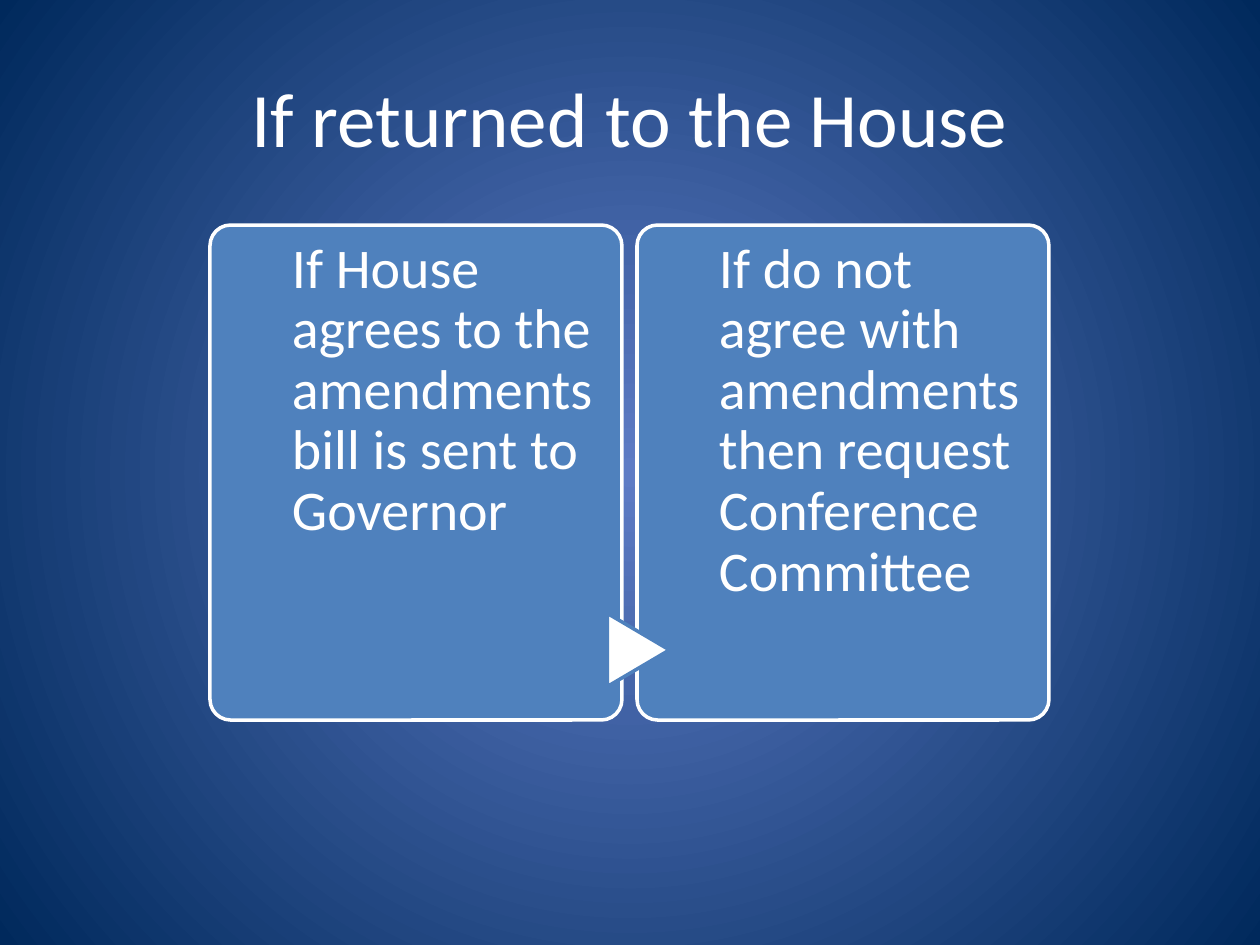
from lxml.etree import SubElement
from pptx import Presentation
from pptx.dml.color import RGBColor
from pptx.enum.shapes import MSO_SHAPE as Shape
from pptx.enum.text import MSO_ANCHOR as Anchor, PP_ALIGN as Align
from pptx.oxml.ns import qn
from pptx.util import Emu, Pt

EMU_PER_PX = 914400 / 126
FONT = "Calibri"
WHITE = RGBColor(0xFF, 0xFF, 0xFF)
CARD_BLUE = RGBColor(0x4F, 0x81, 0xBD)
GLOW_BLUE = RGBColor(0x5E, 0x7C, 0xC5)
NIGHT_BLUE = RGBColor(0x00, 0x29, 0x5C)

OUTCOMES = [
    "If House agrees to the amendments bill is sent to Governor",
    "If do not agree with amendments then request Conference Committee",
]


def px(*lengths):
    """Turn pixel lengths into a list of EMU."""
    return [Emu(round(length * EMU_PER_PX)) for length in lengths]


def paint_background(slide):
    """Fill the slide with a gradient that darkens outwards from the centre."""
    fill = slide.background.fill
    fill.gradient()
    for stop, color in zip(fill.gradient_stops, (GLOW_BLUE, NIGHT_BLUE)):
        stop.color.rgb = color
    gradient = slide.background._cSld.find(".//" + qn("a:gradFill"))
    gradient.remove(gradient.find(qn("a:lin")))
    circle = SubElement(gradient, qn("a:path"), path="circle")
    SubElement(circle, qn("a:fillToRect"), l="50000", t="50000", r="50000", b="50000")


def write(paragraph, text, size):
    """Add one white run to a paragraph."""
    run = paragraph.add_run()
    run.text = text
    run.font.name = FONT
    run.font.size = Pt(size)
    run.font.color.rgb = WHITE


def place_title(slide, text, left, top, width, height):
    """Move and fill the title placeholder."""
    title = slide.shapes.title
    title.left, title.top, title.width, title.height = px(left, top, width, height)
    title.text_frame.vertical_anchor = Anchor.MIDDLE
    heading = title.text_frame.paragraphs[0]
    heading.alignment = Align.CENTER
    write(heading, text, 44)


def add_panel(slide, kind, box, fill, line):
    """Add a flat outlined shape in the given box."""
    panel = slide.shapes.add_shape(kind, *px(*box))
    panel.shadow.inherit = False
    panel.fill.solid()
    panel.fill.fore_color.rgb = fill
    panel.line.color.rgb = line
    panel.line.width = Pt(2)
    return panel


def add_card(slide, text, left, top, width, height):
    """Add a rounded card with its text set in from the left."""
    card = add_panel(slide, Shape.ROUNDED_RECTANGLE, (left, top, width, height), CARD_BLUE, WHITE)
    card.adjustments[0] = 0.05
    outcome = slide.shapes.add_textbox(*px(left + 82, top, width - 105, height))
    frame = outcome.text_frame
    frame.word_wrap = True
    frame.margin_left, frame.margin_top, frame.margin_right, frame.margin_bottom = px(0, 15, 0, 0)
    frame.paragraphs[0].line_spacing = 0.9
    write(frame.paragraphs[0], text, 32)


def add_process(slide, outcomes, left, top, width, height):
    """Lay out the cards in a row with an arrow over each gap."""
    gap = 15
    card_width = (width - gap * (len(outcomes) - 1)) // len(outcomes)
    for index, outcome in enumerate(outcomes):
        card_left = left + index * (card_width + gap)
        add_card(slide, outcome, card_left, top, card_width, height)
        if index:
            arrow_box = (card_left - 35, top + 394, 73, 62)
            arrow = add_panel(slide, Shape.FLOWCHART_EXTRACT, arrow_box, WHITE, CARD_BLUE)
            arrow.rotation = 90


def main():
    """Build and save the slide."""
    deck = Presentation()
    deck.slide_width, deck.slide_height = px(1260, 945)
    slide = deck.slides.add_slide(deck.slide_layouts[5])
    paint_background(slide)
    place_title(slide, "If returned to the House", 63, 38, 1134, 158)
    add_process(slide, OUTCOMES, 210, 225, 839, 495)
    deck.save("out.pptx")


if __name__ == "__main__":
    main()
